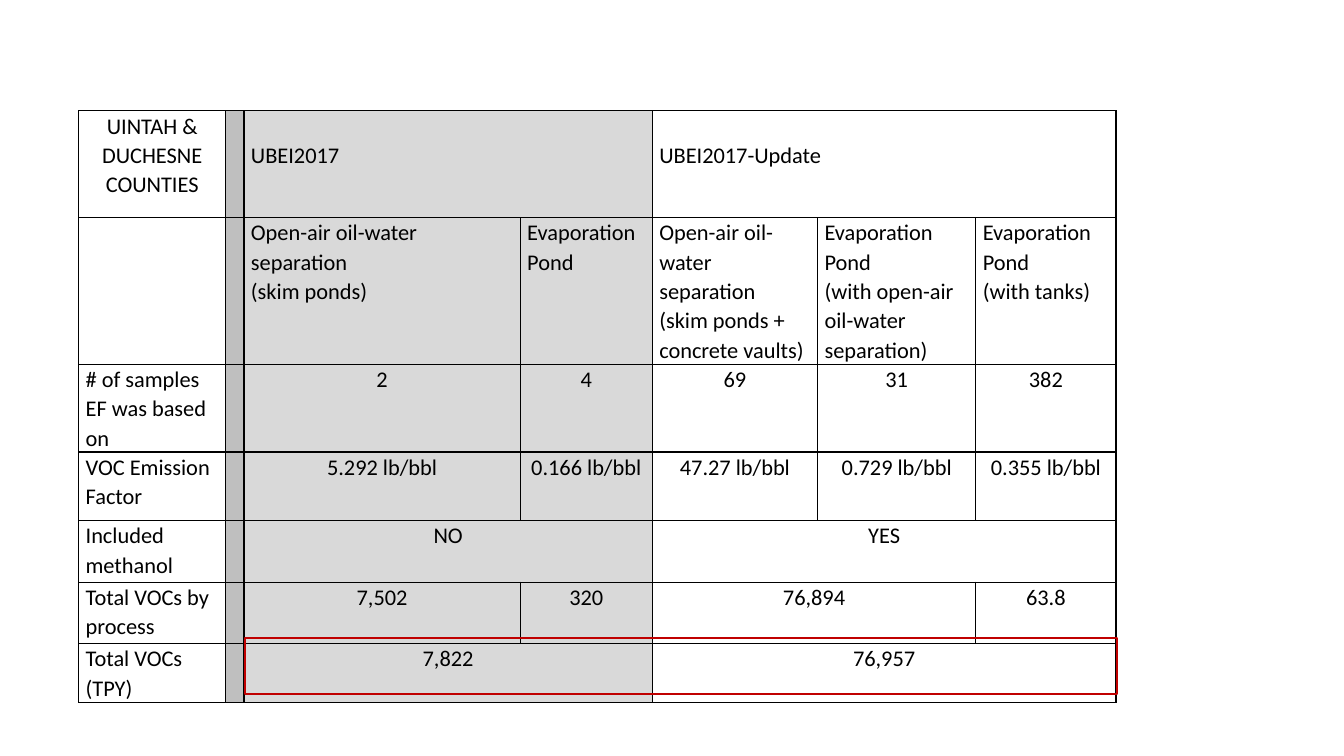
from typing import NamedTuple

from lxml.etree import SubElement
from pptx import Presentation
from pptx.dml.color import RGBColor
from pptx.enum.shapes import MSO_SHAPE as Shape
from pptx.enum.text import PP_ALIGN as Align
from pptx.oxml.ns import qn
from pptx.util import Inches, Pt

WIDTHS = [1.46, 0.18, 2.74, 1.31, 1.64, 1.57, 1.39]
HEIGHTS = [1.06, 1.31, 0.77, 0.68, 0.61, 0.61, 0.53]
FILLS = {1: "BFBFBF", 2: "D9D9D9", 3: "D9D9D9"}


class Entry(NamedTuple):
    text: str
    col: int
    span: int = 1
    center: bool = True
    top: float = 0


def left(text: str, col: int, span: int = 1, top: float = 0) -> Entry:
    """Describe a left-aligned cell."""
    return Entry(text, col, span, False, top)


ROWS = [
    [Entry("UINTAH & DUCHESNE COUNTIES", 0),
     left("UBEI2017", 2, 2, 0.29), left("UBEI2017-Update", 4, 3, 0.29)],
    [left("Open-air oil-water separation\n(skim ponds)", 2),
     left("Evaporation Pond", 3),
     left("Open-air oil-water separation\n(skim ponds + concrete vaults)", 4),
     left("Evaporation Pond\n(with open-air oil-water separation)", 5),
     left("Evaporation Pond\n(with tanks)", 6)],
    [left("# of samples EF was based on", 0), Entry("2", 2), Entry("4", 3),
     Entry("69", 4), Entry("31", 5), Entry("382", 6)],
    [left("VOC Emission Factor", 0), Entry("5.292 lb/bbl", 2),
     Entry("0.166 lb/bbl", 3), Entry("47.27 lb/bbl", 4),
     Entry("0.729 lb/bbl", 5), Entry("0.355 lb/bbl", 6)],
    [left("Included methanol", 0), Entry("NO", 2, 2), Entry("YES", 4, 3)],
    [left("Total VOCs by process", 0), Entry("7,502", 2), Entry("320", 3),
     Entry("76,894", 4, 2), Entry("63.8", 6)],
    [left("Total VOCs (TPY)", 0), Entry("7,822", 2, 2), Entry("76,957", 4, 3)],
]


def color(code: str) -> RGBColor:
    return RGBColor.from_string(code)


def frame(cell) -> None:
    """Give the cell a thin black border on all sides."""
    props = cell._tc.get_or_add_tcPr()
    for side in ("lnL", "lnR", "lnT", "lnB"):
        line = SubElement(props, qn(f"a:{side}"), w=str(Pt(1)))
        fill = SubElement(line, qn("a:solidFill"))
        SubElement(fill, qn("a:srgbClr"), val="000000")


def paint(cell, col: int) -> None:
    """Set border, fill and margins; borders must precede the fill."""
    frame(cell)
    if col in FILLS:
        cell.fill.solid()
        cell.fill.fore_color.rgb = color(FILLS[col])
    else:
        cell.fill.background()
    cell.margin_left = cell.margin_right = Inches(0.07)
    cell.margin_top = cell.margin_bottom = 0


def write(table, row: int, entry: Entry) -> None:
    cell = table.cell(row, entry.col)
    if entry.span > 1:
        cell.merge(table.cell(row, entry.col + entry.span - 1))
    cell.margin_top = Inches(entry.top)
    cell.text = entry.text
    for para in cell.text_frame.paragraphs:
        para.alignment = Align.CENTER if entry.center else Align.LEFT
        para.line_spacing = 1.07
        para.font.name = "Calibri"
        para.font.size = Pt(16)
        para.font.bold = False
        para.font.color.rgb = color("000000")


def build(slide) -> None:
    """Draw the table of emission results."""
    box = [Inches(n) for n in (0.78, 1.1, sum(WIDTHS), sum(HEIGHTS))]
    table = slide.shapes.add_table(len(HEIGHTS), len(WIDTHS), *box).table
    table.first_row = table.horz_banding = False
    for column, width in zip(table.columns, WIDTHS):
        column.width = Inches(width)
    for row, height in zip(table.rows, HEIGHTS):
        row.height = Inches(height)
        for col, cell in enumerate(row.cells):
            paint(cell, col)
    for row, entries in enumerate(ROWS):
        for entry in entries:
            write(table, row, entry)


def outline(slide) -> None:
    """Mark the totals with a red box."""
    box = [Inches(n) for n in (2.43, 6.33, 8.65, 0.56)]
    mark = slide.shapes.add_shape(Shape.RECTANGLE, *box)
    mark.shadow.inherit = False
    mark.fill.background()
    mark.line.color.rgb = color("C00000")
    mark.line.width = Pt(1.5)


def main() -> None:
    deck = Presentation()
    deck.slide_width, deck.slide_height = Inches(13.33), Inches(7.5)
    slide = deck.slides.add_slide(deck.slide_layouts[6])
    build(slide)
    outline(slide)
    deck.save("out.pptx")


if __name__ == "__main__":
    main()
